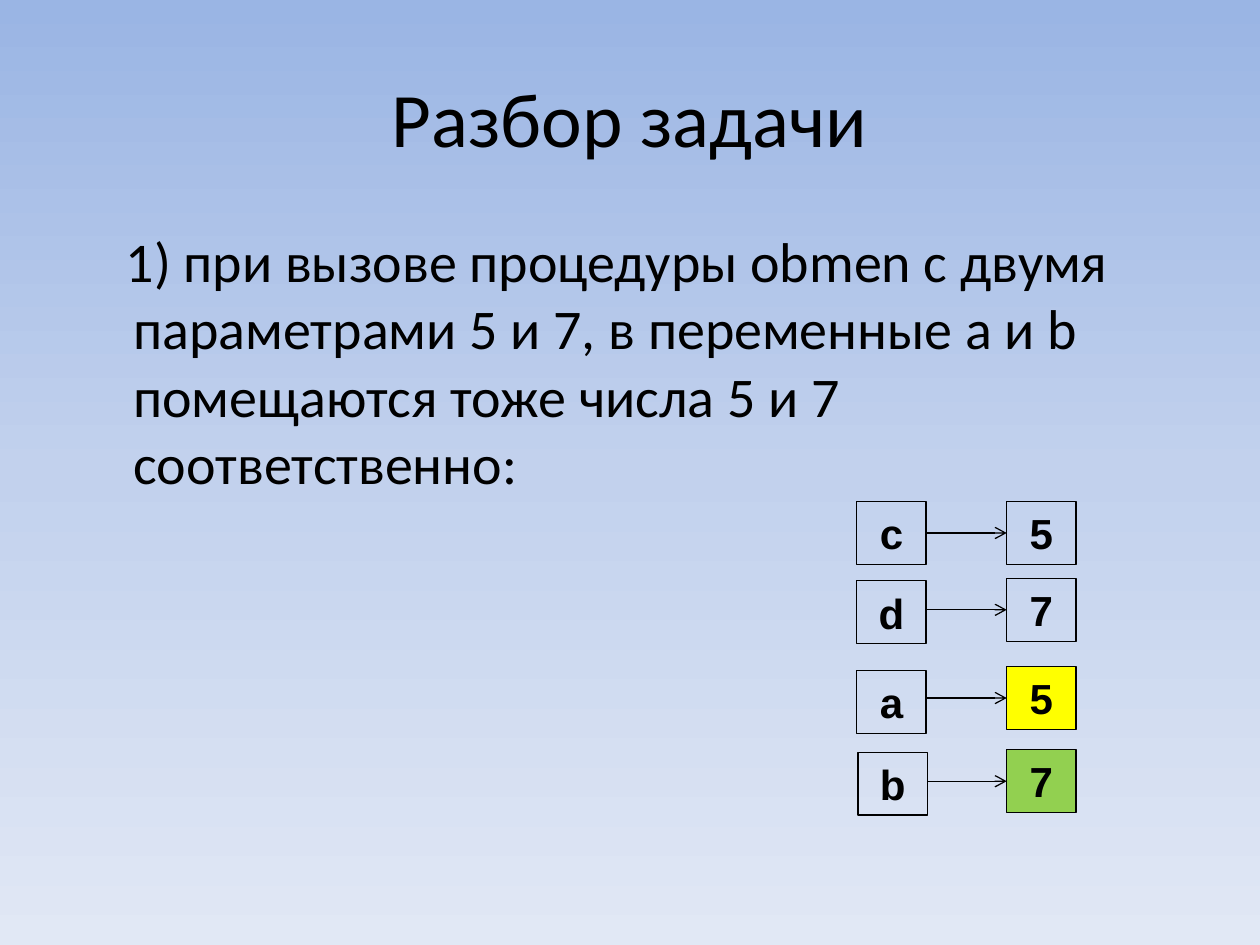
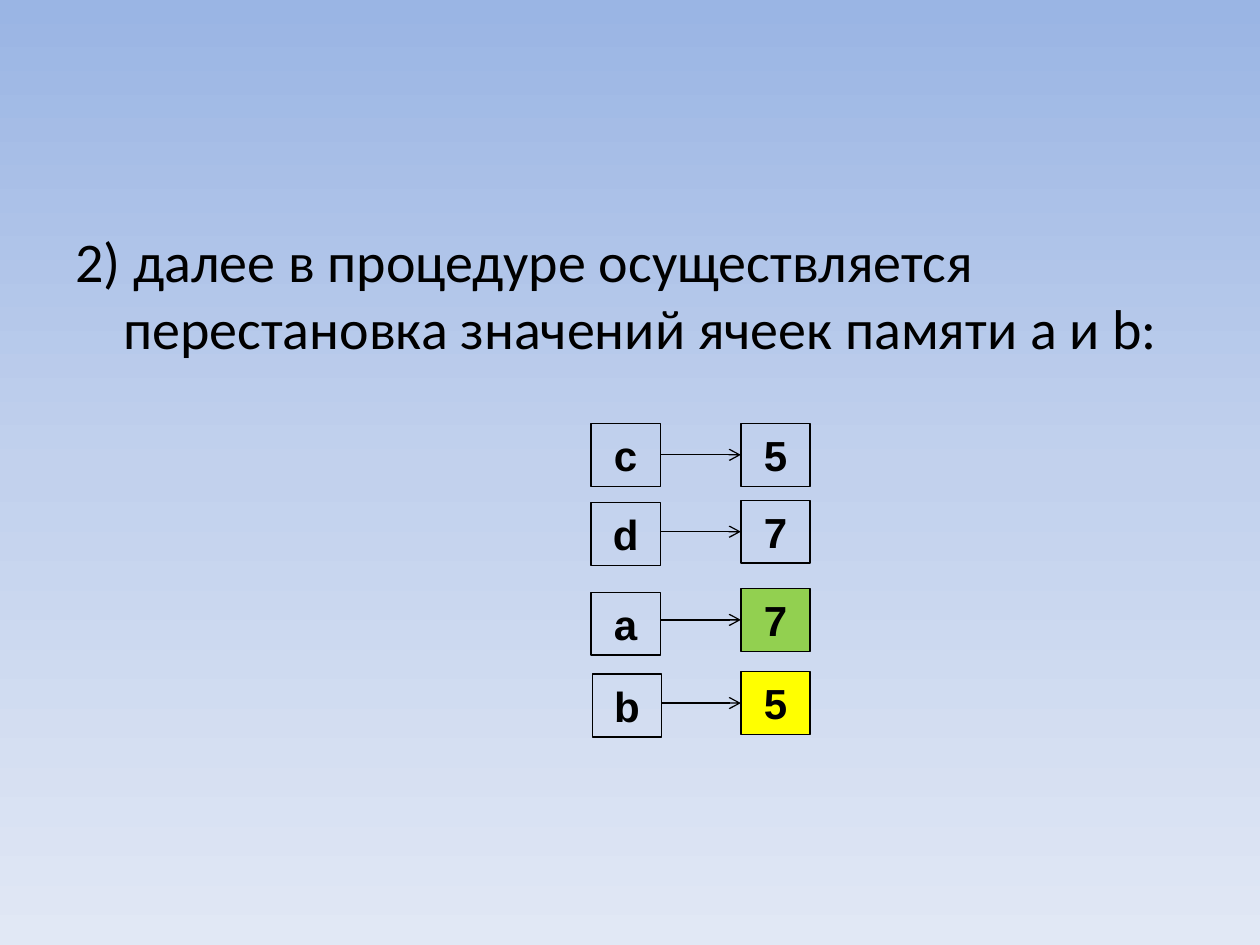
from copy import deepcopy

from lxml.etree import SubElement
from pptx import Presentation
from pptx.dml.color import RGBColor
from pptx.enum.shapes import MSO_CONNECTOR as Connector, MSO_SHAPE as Shape
from pptx.enum.text import MSO_ANCHOR as Anchor, MSO_AUTO_SIZE as AutoSize, PP_ALIGN as Align
from pptx.oxml.ns import qn
from pptx.util import Inches, Pt

BLACK, YELLOW, GREEN = "000000", "FFFF00", "92D050"
BACKDROP = ("9AB5E4", "C2D1ED", "E1E8F5")
TITLE_ONLY, BLANK = 5, 6

# Memory cells, in grid units
CELL_WIDTH, CELL_HEIGHT = 5.5, 5
VALUE_OFFSET = 11.9
# Per row: variable, value top from the first row, name's shift right and down
CELL_ROWS = (("с", 0, 0, 0), ("d", 6.1, 0, 0.2), ("a", 13.1, 0, 0.3), ("b", 19.7, 0.1, 0.2))


def color(hex_text):
    return RGBColor.from_string(hex_text)


class SlideBuilder:
    """Style and current slide; lengths are cells of a 100 by 75 grid."""

    text_font, cell_font = "Calibri", "Arial"
    title_size, text_size, cell_size = 44, 32, 24
    line_width = 0.75

    def __init__(self, deck):
        self.deck = deck
        self.column = deck.slide_width / 100
        self.row = deck.slide_height / 75
        self.slide = None

    def area(self, left, top, width, height):
        return (round(left * self.column), round(top * self.row),
                round(width * self.column), round(height * self.row))

    def backdrop(self, colors):
        master = self.deck.slide_master
        fill = master.background.fill
        fill.gradient()
        fill.gradient_angle = 270
        for stop, shade, position in zip(fill.gradient_stops, (colors[0], colors[-1]), (0, 1)):
            stop.color.rgb = color(shade)
            stop.position = position
        # The middle stop is a copy of the first one
        stop_list = next(master.element.iter(qn("a:gsLst")))
        middle = deepcopy(stop_list[0])
        middle.set("pos", "50000")
        middle.find(qn("a:srgbClr")).set("val", colors[1])
        stop_list.insert(1, middle)

    def new_slide(self, layout):
        self.slide = self.deck.slides.add_slide(self.deck.slide_layouts[layout])

    def add_text(self, frame, text, size, font, bold=False, align=Align.LEFT):
        para = frame.paragraphs[0]
        para.alignment = align
        span = para.add_run()
        span.text = text
        span.font.size = Pt(size)
        span.font.name = font
        span.font.bold = bold
        span.font.color.rgb = color(BLACK)
        return para

    def title(self, text):
        box = self.slide.shapes.title
        box.left, box.top, box.width, box.height = self.area(5, 3, 90, 12.5)
        box.text_frame.vertical_anchor = Anchor.MIDDLE
        self.add_text(box.text_frame, text, self.title_size, self.text_font, align=Align.CENTER)

    def body(self, text, left, first_line):
        box = self.slide.shapes.add_textbox(*self.area(left, 17.5, 90, 49.5))
        box.text_frame.word_wrap = True
        para = self.add_text(box.text_frame, text, self.text_size, self.text_font)
        para.space_before = Pt(0.2 * self.text_size)
        properties = para._p.get_or_add_pPr()
        properties.set("marL", str(Inches(0.38)))
        properties.set("indent", str(Inches(first_line)))

    def cell(self, text, left, top, fill=None):
        box = self.slide.shapes.add_shape(
            Shape.RECTANGLE, *self.area(left, top, CELL_WIDTH, CELL_HEIGHT))
        box.shadow.inherit = False
        if fill:
            box.fill.solid()
            box.fill.fore_color.rgb = color(fill)
        else:
            box.fill.background()
        box.line.color.rgb = color(BLACK)
        box.line.width = Pt(self.line_width)
        frame = box.text_frame
        frame.vertical_anchor = Anchor.TOP
        frame.auto_size = AutoSize.SHAPE_TO_FIT_TEXT
        self.add_text(frame, text, self.cell_size, self.cell_font, bold=True, align=Align.CENTER)
        return box

    def arrow(self, name, value):
        middle = value.top + value.height // 2
        link = self.slide.shapes.add_connector(
            Connector.STRAIGHT, name.left + name.width, middle, value.left, middle)
        # A name that sits lower than its value keeps a level arrow
        if name.top == value.top:
            link.begin_connect(name, 3)
        link.end_connect(value, 1)
        link.line.color.rgb = color(BLACK)
        link.line.width = Pt(self.line_width)
        properties = link.element.spPr
        SubElement(properties.find(qn("a:ln")), qn("a:tailEnd"), type="arrow")
        SubElement(properties, qn("a:effectLst"))

    def memory(self, left, top, values):
        for (name, offset, right, down), (value, fill) in zip(CELL_ROWS, values):
            name_box = self.cell(name, left + right, top + offset + down)
            value_box = self.cell(value, left + VALUE_OFFSET, top + offset, fill)
            self.arrow(name_box, value_box)


def main():
    deck = Presentation()
    deck.slide_width, deck.slide_height = Inches(10), Inches(7.5)
    builder = SlideBuilder(deck)
    builder.backdrop(BACKDROP)
    arguments = [("5", None), ("7", None)]

    # Values passed to the procedure
    builder.new_slide(TITLE_ONLY)
    builder.title("Разбор задачи")
    builder.body("1) при вызове процедуры obmen с двумя параметрами 5 и 7, "
                 "в переменные a и b помещаются тоже числа 5 и 7 соответственно:",
                 left=5.8, first_line=-0.06)
    builder.memory(68, 39.8, arguments + [("5", YELLOW), ("7", GREEN)])

    # Values after the exchange
    builder.new_slide(BLANK)
    builder.body("2) далее в процедуре осуществляется "
                 "перестановка значений ячеек памяти a и b:",
                 left=5, first_line=-0.38)
    builder.memory(46.9, 33.6, arguments + [("7", GREEN), ("5", YELLOW)])

    deck.save("out.pptx")


if __name__ == "__main__":
    main()
